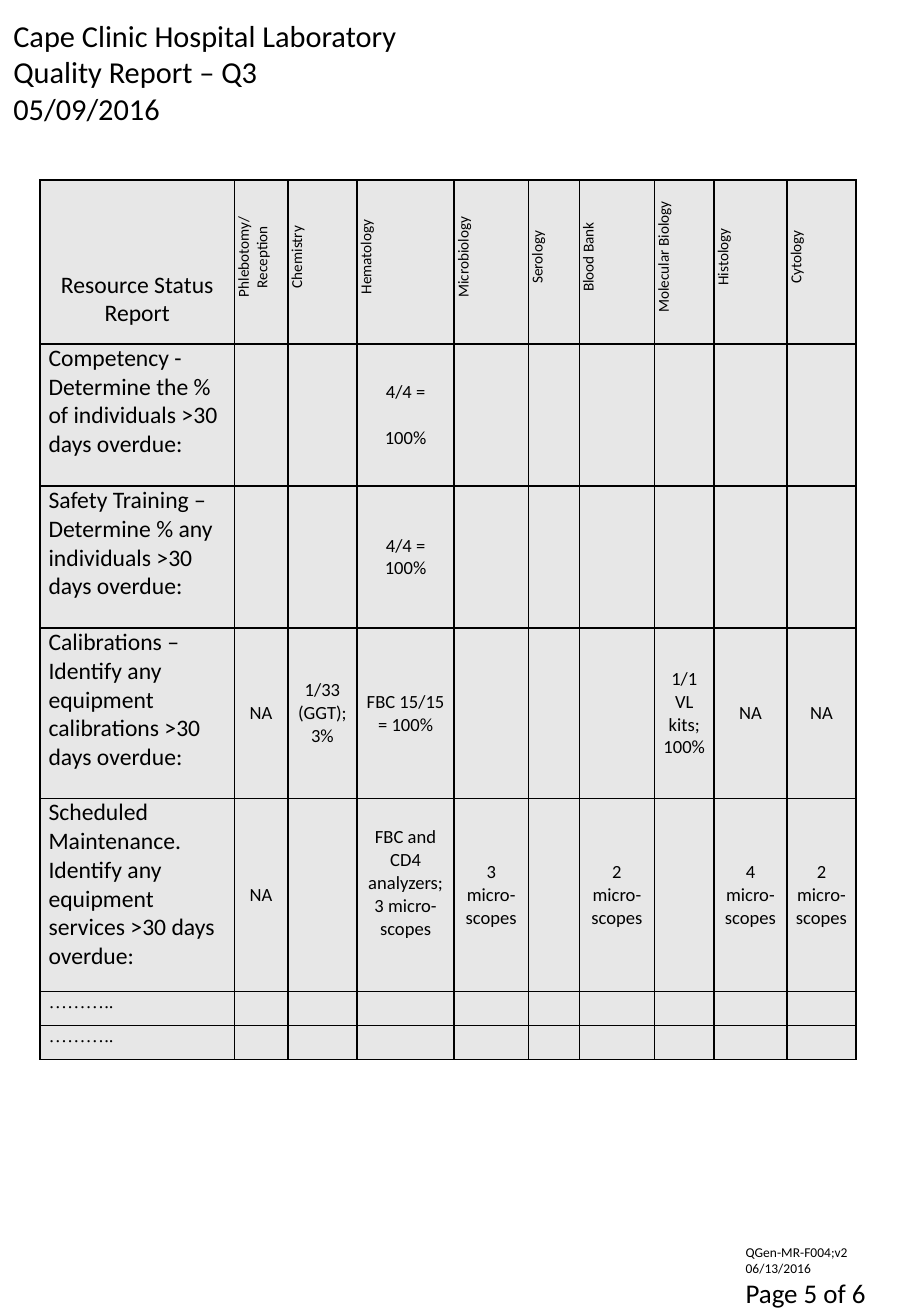
from dataclasses import dataclass

from lxml import etree
from pptx import Presentation
from pptx.dml.color import RGBColor
from pptx.enum.text import MSO_ANCHOR, MSO_AUTO_SIZE, PP_ALIGN
from pptx.oxml.ns import qn
from pptx.util import Inches, Pt

TOP, MIDDLE, BOTTOM = MSO_ANCHOR.TOP, MSO_ANCHOR.MIDDLE, MSO_ANCHOR.BOTTOM
LEFT, CENTER = PP_ALIGN.LEFT, PP_ALIGN.CENTER
NO_AUTOFIT = MSO_AUTO_SIZE.NONE
TITLE_ONLY = 5


@dataclass(frozen=True)
class Theme:
    ink: RGBColor = RGBColor(0x00, 0x00, 0x00)
    cell: RGBColor = RGBColor(0xE7, 0xE7, 0xE7)
    sans: str = "Calibri"
    serif: str = "Times New Roman"
    title: int = 18
    page: int = 16
    label: int = 14
    value: int = 11
    department: int = 9
    small: int = 8
    border: int = 1


THEME = Theme()
PAGE_WIDTH, PAGE_HEIGHT = 7.5, 10.83

# Table grid, in inches
TABLE_LEFT, TABLE_TOP = 0.33, 1.48
COLUMNS = [1.6, 0.44, 0.57, 0.8, 0.61, 0.42, 0.62, 0.49, 0.6, 0.57]
ROWS = [1.35, 1.17, 1.17, 1.4, 1.59, 0.28, 0.28]
SIDE_INSET = 0.07

REPORT_LINES = ["Cape Clinic Hospital Laboratory", "Quality Report – Q3", "05/09/2016"]
TABLE_TITLE = "Resource Status Report"
DEPARTMENTS = ["Phlebotomy/\vReception", "Chemistry", "Hematology", "Microbiology",
               "Serology", "Blood Bank", "Molecular Biology", "Histology", "Cytology"]
CHECKS = [
    "Competency - Determine the % of individuals >30 days overdue:",
    "Safety Training –Determine % any individuals >30 days overdue:",
    "Calibrations – Identify any equipment calibrations >30 days overdue:",
    "Scheduled Maintenance. Identify any equipment services >30 days overdue:",
]
OPEN_ROWS = ["………..", "……….."]

# Results by (row, column) of the table
RESULTS = {
    (1, 3): ["4/4 =", "100%"],
    (2, 3): ["4/4 = 100%"],
    (3, 1): ["NA"],
    (3, 2): ["1/33 (GGT);", "3%"],
    (3, 3): ["FBC 15/15", "= 100%"],
    (3, 7): ["1/1", "VL kits; 100%"],
    (3, 8): ["NA"],
    (3, 9): ["NA"],
    (4, 1): ["NA"],
    (4, 3): ["FBC and CD4 analyzers;", "3 micro-scopes"],
    (4, 4): ["3 micro-scopes"],
    (4, 6): ["2 micro-scopes"],
    (4, 8): ["4 micro-scopes"],
    (4, 9): ["2 micro-scopes"],
}
LINE_GAPS = {(1, 3): 13.4}
BOTTOM_INSETS = {(4, 3): 0.19}


def write_lines(frame, lines, sizes, align=LEFT, font=THEME.sans, gap=0):
    """Write one paragraph per line, with a size for each."""
    for index, (line, size) in enumerate(zip(lines, sizes)):
        paragraph = frame.add_paragraph() if index else frame.paragraphs[0]
        paragraph.alignment = align
        if index and gap:
            paragraph.space_before = Pt(gap)
        for part_index, part in enumerate(line.split("\v")):
            if part_index:
                paragraph.add_line_break()
            run = paragraph.add_run()
            run.text = part
            run.font.name = font
            run.font.size = Pt(size)
            run.font.color.rgb = THEME.ink


def place_text(holder, left, top, width, height, lines, sizes):
    holder.left, holder.top = Inches(left), Inches(top)
    holder.width, holder.height = Inches(width), Inches(height)
    frame = holder.text_frame
    frame.word_wrap = True
    frame.auto_size = NO_AUTOFIT
    frame.vertical_anchor = TOP
    write_lines(frame, lines, sizes)


def style_cell(cell):
    """Give a cell its borders, fill and insets."""
    properties = cell._tc.get_or_add_tcPr()
    for side in ("a:lnL", "a:lnR", "a:lnT", "a:lnB"):
        border = etree.SubElement(properties, qn(side), w=str(Pt(THEME.border)))
        fill = etree.SubElement(border, qn("a:solidFill"))
        etree.SubElement(fill, qn("a:srgbClr"), val=str(THEME.ink))
    cell.fill.solid()
    cell.fill.fore_color.rgb = THEME.cell
    cell.margin_left = cell.margin_right = Inches(SIDE_INSET)
    cell.margin_top = cell.margin_bottom = 0


def write_cell(cell, lines, size, anchor=MIDDLE, align=CENTER, inset=0, **style):
    cell.vertical_anchor = anchor
    cell.margin_bottom = Inches(inset)
    write_lines(cell.text_frame, lines, [size] * len(lines), align, **style)


def write_department(cell, name):
    """Write a heading that reads upwards."""
    cell._tc.get_or_add_tcPr().set("vert", "vert270")
    write_cell(cell, [name], THEME.department)
    properties = cell.text_frame.paragraphs[0]._p.get_or_add_pPr()
    properties.set("marL", str(Inches(0.08)))


def keep_empty_cell_small(cell):
    paragraph = cell.text_frame.paragraphs[0]._p
    etree.SubElement(paragraph, qn("a:endParaRPr"), sz=str(THEME.department * 100))


def add_status_table(slide):
    frame = slide.shapes.add_table(
        len(ROWS), len(COLUMNS), Inches(TABLE_LEFT), Inches(TABLE_TOP),
        Inches(sum(COLUMNS)), Inches(sum(ROWS)))
    table = frame.table
    for column, width in zip(table.columns, COLUMNS):
        column.width = Inches(width)
    for row, height in zip(table.rows, ROWS):
        row.height = Inches(height)
    for cell in table.iter_cells():
        style_cell(cell)

    # Heading row
    write_cell(table.cell(0, 0), [TABLE_TITLE], THEME.label, BOTTOM, inset=0.13)
    for column, name in enumerate(DEPARTMENTS, 1):
        write_department(table.cell(0, column), name)

    # Label column
    for row, check in enumerate(CHECKS, 1):
        write_cell(table.cell(row, 0), [check], THEME.label, TOP, LEFT)
    for row, dots in enumerate(OPEN_ROWS, len(CHECKS) + 1):
        write_cell(table.cell(row, 0), [dots], THEME.value, TOP, LEFT, font=THEME.serif)

    # Results
    for row in range(1, len(ROWS)):
        for column in range(1, len(COLUMNS)):
            place, cell = (row, column), table.cell(row, column)
            if place in RESULTS:
                write_cell(cell, RESULTS[place], THEME.value,
                           inset=BOTTOM_INSETS.get(place, 0),
                           gap=LINE_GAPS.get(place, 0))
            else:
                keep_empty_cell_small(cell)


def main():
    deck = Presentation()
    deck.slide_width, deck.slide_height = Inches(PAGE_WIDTH), Inches(PAGE_HEIGHT)
    slide = deck.slides.add_slide(deck.slide_layouts[TITLE_ONLY])

    # Report heading
    place_text(slide.shapes.title, 0.01, 0.09, 3.55, 1.01,
               REPORT_LINES, [THEME.title] * len(REPORT_LINES))

    # Document number and page
    footer = slide.shapes.add_textbox(0, 0, 0, 0)
    place_text(footer, 6.04, 10.19, PAGE_WIDTH - 6.04, 0.64,
               ["QGen-MR-F004;v2", "06/13/2016", "Page 5 of 6"],
               [THEME.small, THEME.small, THEME.page])

    add_status_table(slide)
    deck.save("out.pptx")


if __name__ == "__main__":
    main()
